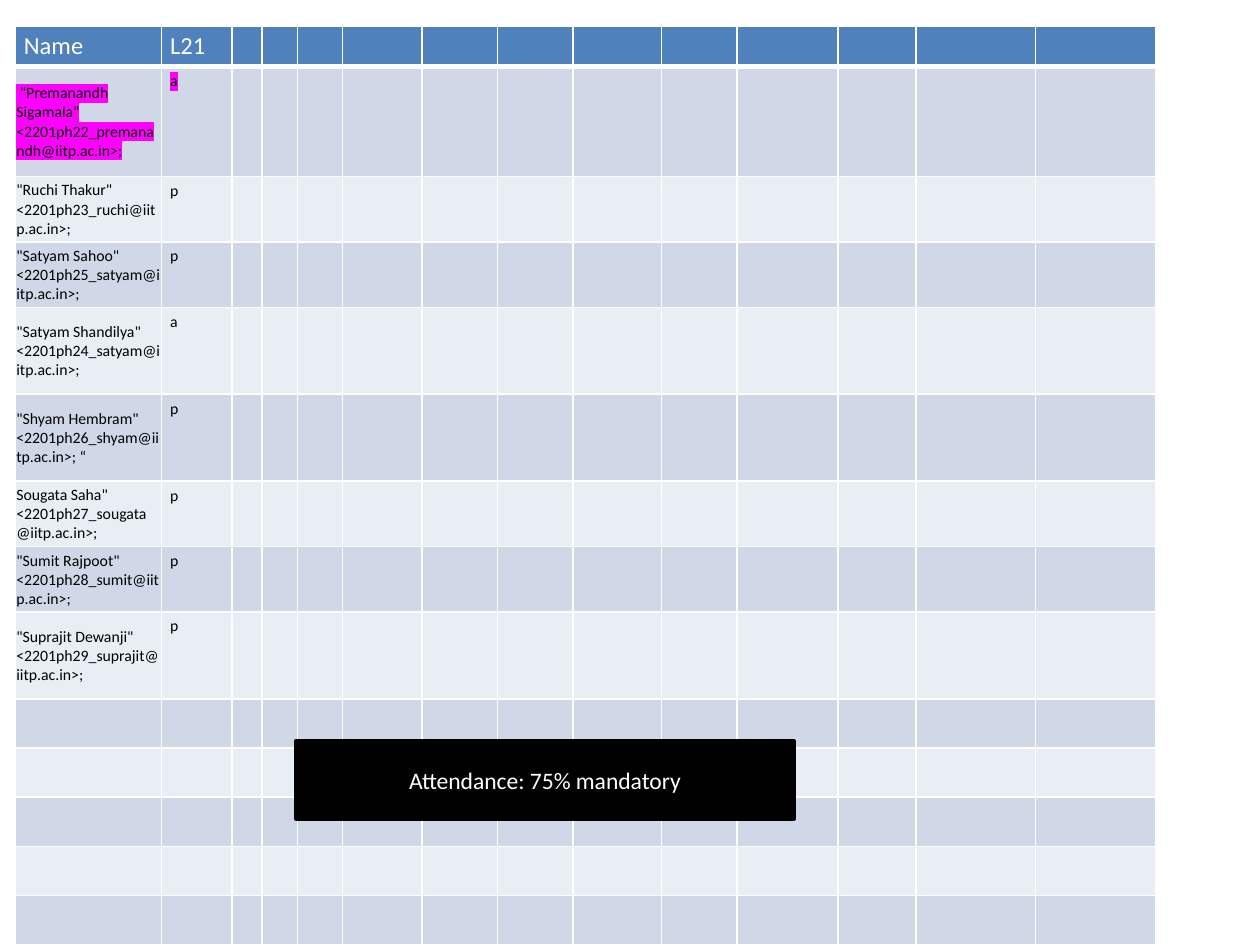
import pptx
import pptx.util
import pptx.dml.color
import pptx.enum.shapes
import pptx.enum.text
import pptx.oxml
import pptx.oxml.ns
from pptx.util import Inches

COLORS = {
    "header": "4F81BD",
    "band_dark": "D0D8E8",
    "band_light": "E9EDF4",
    "white": "FFFFFF",
    "black": "000000",
    "highlight": "FF00FF",
}
FONT = "Calibri"
COLUMN_WIDTHS = [1.16, 0.56, 0.24, 0.28, 0.36, 0.63, 0.6, 0.6, 0.7, 0.6, 0.8, 0.62, 0.95, 0.95]
ROW_HEIGHTS = [0.32, 0.87, 0.52, 0.52, 0.69, 0.69, 0.52, 0.52, 0.69] + [0.39] * 5
HEADINGS = ("Name", "L21")
STUDENTS = [
    (' "Premanandh Sigamala" <2201ph22_premanandh@iitp.ac.in>;', "a"),
    ('"Ruchi Thakur" <2201ph23_ruchi@iitp.ac.in>;', "p"),
    ('"Satyam Sahoo" <2201ph25_satyam@iitp.ac.in>;', "p"),
    ('"Satyam Shandilya" <2201ph24_satyam@iitp.ac.in>;', "a"),
    ('"Shyam Hembram" <2201ph26_shyam@iitp.ac.in>; “', "p"),
    ('Sougata Saha" <2201ph27_sougata@iitp.ac.in>;', "p"),
    ('"Sumit Rajpoot" <2201ph28_sumit@iitp.ac.in>;', "p"),
    ('"Suprajit Dewanji" <2201ph29_suprajit@iitp.ac.in>;', "p"),
]
HIGHLIGHTED_ROW = 1


def rgb(name):
    return pptx.dml.color.RGBColor.from_string(COLORS[name])


def style_paragraph(paragraph, size, color):
    paragraph.font.name = FONT
    paragraph.font.size = pptx.util.Pt(size)
    paragraph.font.color.rgb = rgb(color)


def set_margins(cell, left, top, right, bottom):
    cell.margin_left, cell.margin_top = Inches(left), Inches(top)
    cell.margin_right, cell.margin_bottom = Inches(right), Inches(bottom)


def set_borders(cell, bottom_width):
    """Draw white lines around a cell; they come before its fill in the XML."""
    properties = cell._tc.get_or_add_tcPr()
    sides = (("lnL", 1), ("lnR", 1), ("lnT", 1), ("lnB", bottom_width))
    for position, (side, width) in enumerate(sides):
        properties.insert(position, pptx.oxml.parse_xml(
            f'<a:{side} {pptx.oxml.ns.nsdecls("a")} w="{pptx.util.Pt(width)}">'
            f'<a:solidFill><a:srgbClr val="{COLORS["white"]}"/></a:solidFill></a:{side}>'))


def highlight(paragraph):
    for run in paragraph.runs:
        run._r.get_or_add_rPr().append(pptx.oxml.parse_xml(
            f'<a:highlight {pptx.oxml.ns.nsdecls("a")}>'
            f'<a:srgbClr val="{COLORS["highlight"]}"/></a:highlight>'))


def fill_cell(cell, text, row, column):
    is_header = row == 0
    band = "header" if is_header else "band_dark" if row % 2 else "band_light"
    cell.fill.solid()
    cell.fill.fore_color.rgb = rgb(band)
    set_borders(cell, 3 if is_header else 1)
    if not text:
        set_margins(cell, 0.07, 0, 0.07, 0)
        return

    cell.text = text
    paragraph = cell.text_frame.paragraphs[0]
    if is_header:
        style_paragraph(paragraph, 14, "white")
    else:
        style_paragraph(paragraph, 9, "black")
    if column == 0 and not is_header:
        set_margins(cell, 0.01, 0.01, 0.01, 0)
        cell.vertical_anchor = pptx.enum.text.MSO_ANCHOR.MIDDLE
    else:
        set_margins(cell, 0.07, 0.04, 0.07, 0.04)
    if row == HIGHLIGHTED_ROW:
        highlight(paragraph)


def add_attendance_table(slide):
    attendance = slide.shapes.add_table(
        len(ROW_HEIGHTS), len(COLUMN_WIDTHS), Inches(0.12), Inches(0.21),
        Inches(sum(COLUMN_WIDTHS)), Inches(sum(ROW_HEIGHTS))).table
    for column, width in zip(attendance.columns, COLUMN_WIDTHS):
        column.width = Inches(width)
    for row, height in zip(attendance.rows, ROW_HEIGHTS):
        row.height = Inches(height)

    entries = [HEADINGS] + STUDENTS
    for row in range(len(ROW_HEIGHTS)):
        texts = entries[row] if row < len(entries) else ()
        for column in range(len(COLUMN_WIDTHS)):
            text = texts[column] if column < len(texts) else ""
            fill_cell(attendance.cell(row, column), text, row, column)


def add_notice(slide, text):
    notice = slide.shapes.add_shape(
        pptx.enum.shapes.MSO_SHAPE.RECTANGLE,
        Inches(2.35), Inches(5.88), Inches(3.95), Inches(0.62))
    notice.shadow.inherit = False
    notice.fill.solid()
    notice.fill.fore_color.rgb = rgb("black")
    notice.line.color.rgb = rgb("black")
    notice.line.width = pptx.util.Pt(2)
    notice.text_frame.text = text
    notice.text_frame.vertical_anchor = pptx.enum.text.MSO_ANCHOR.MIDDLE
    paragraph = notice.text_frame.paragraphs[0]
    paragraph.alignment = pptx.enum.text.PP_ALIGN.CENTER
    style_paragraph(paragraph, 13.5, "white")


def main():
    presentation = pptx.Presentation()
    presentation.slide_width = Inches(10)
    presentation.slide_height = Inches(7.5)
    slide = presentation.slides.add_slide(presentation.slide_layouts[6])

    # Attendance register
    add_attendance_table(slide)
    # Attendance rule
    add_notice(slide, "Attendance: 75% mandatory")

    presentation.save("out.pptx")


if __name__ == "__main__":
    main()
